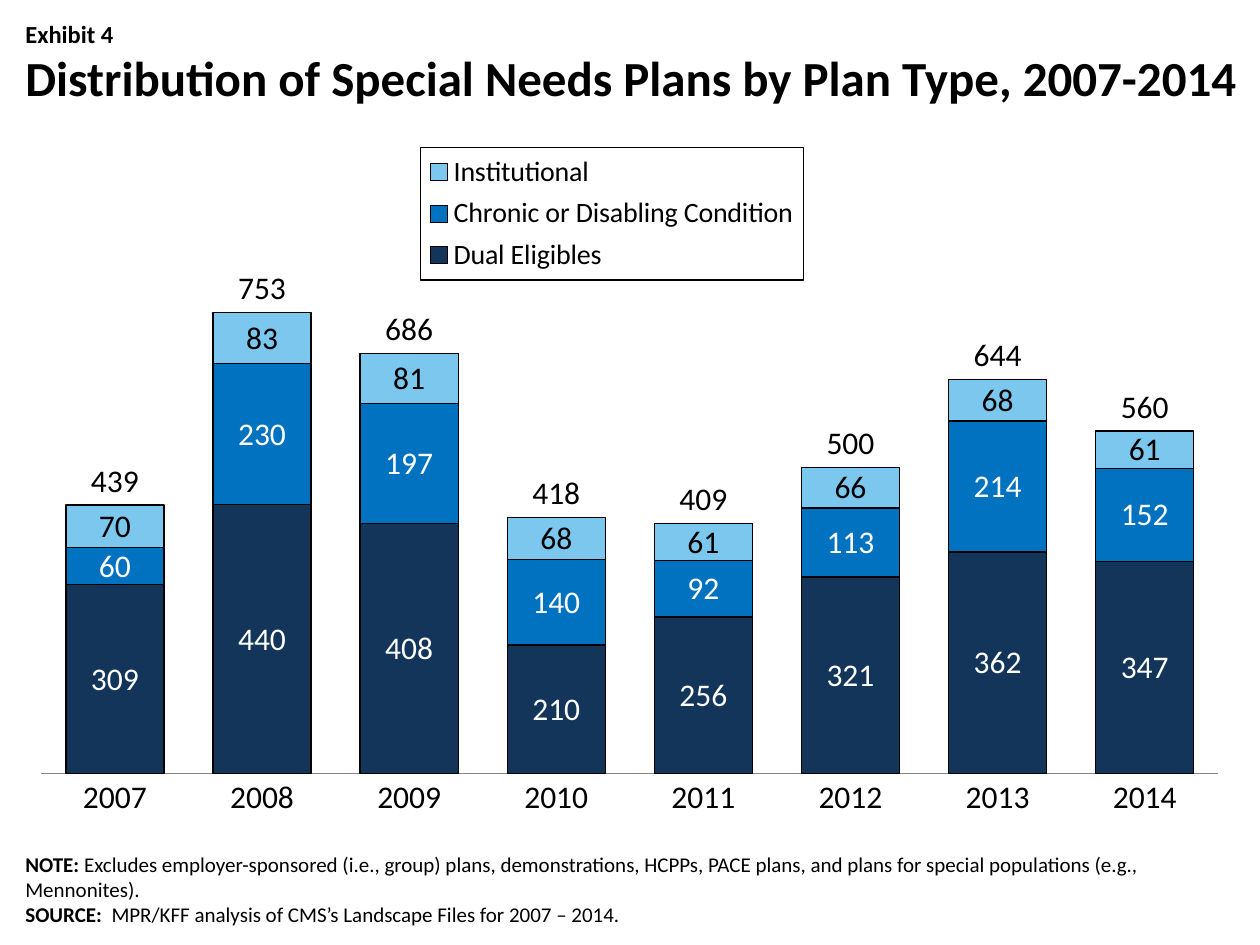
import pptx
import pptx.util
import pptx.chart.data
import pptx.dml.color
import pptx.enum.chart
import pptx.enum.text
import pptx.oxml
import pptx.oxml.ns

RGB = pptx.dml.color.RGBColor
BLACK = RGB(0x00, 0x00, 0x00)
WHITE = RGB(0xFF, 0xFF, 0xFF)
GRAY = RGB(0x86, 0x86, 0x86)
NAVY = RGB(0x13, 0x35, 0x59)
BLUE = RGB(0x00, 0x72, 0xC0)
SKY = RGB(0x7B, 0xC7, 0xED)
FONT = "Calibri"
TOP = pptx.enum.text.MSO_ANCHOR.TOP
BOTTOM = pptx.enum.text.MSO_ANCHOR.BOTTOM

# Content: each text box is (place, size, anchor, line spacing, paragraphs),
# each paragraph a list of (text, bold)
TEXTS = [
    ((13, 13, 1235, 43), 14, TOP, 1.0, [[("Exhibit 4", True)]]),
    ((13, 50, 1247, 76), 28, TOP, 0.85,
     [[("Distribution of Special Needs Plans by Plan Type, 2007-2014", True)]]),
    ((13, 857, 1147, 76), 12, BOTTOM, 1.0, [
        [("NOTE:", True),
         (" Excludes employer-sponsored (i.e., group) plans, demonstrations, HCPPs, "
          "PACE plans, and plans for special populations (e.g., Mennonites).", False)],
        [("SOURCE:  ", True),
         ("MPR/KFF analysis of CMS’s Landscape Files for 2007 – 2014.", False)],
    ]),
]
YEARS = [str(year) for year in range(2007, 2015)]
PLANS = [  # name, values, fill, label colour
    ("Dual Eligibles", [309, 440, 408, 210, 256, 321, 362, 347], NAVY, WHITE),
    ("Chronic or Disabling Condition", [60, 230, 197, 140, 92, 113, 214, 152], BLUE, WHITE),
    ("Institutional", [70, 83, 81, 68, 61, 66, 68, 61], SKY, BLACK),
]
TOTALS = [439, 753, 686, 418, 409, 500, 644, 560]
CHART = (13, 147, 1235, 697)
PLOT = (0.023, 0.196, 0.953, 0.703)
LEGEND = (0.33, 0.0, 0.31, 0.19)


def px(n):
    return pptx.util.Emu(round(n * 914400 / 126))


def style(font, size, color=BLACK, bold=False):
    font.name, font.size, font.bold = FONT, pptx.util.Pt(size), bold
    font.color.rgb = color


def node(tag, inner="", attrs=""):
    spaces = pptx.oxml.ns.nsdecls("c", "a")
    return pptx.oxml.parse_xml(f"<c:{tag} {spaces} {attrs}>{inner}</c:{tag}>")


def kids(parent, tag):
    return parent.findall(pptx.oxml.ns.qn("c:" + tag))


def drop(parent, tag):
    for old in kids(parent, tag):
        parent.remove(old)


def layout(box, inner=False):
    target = '<c:layoutTarget val="inner"/>' if inner else ""
    modes = "".join(f'<c:{k}Mode val="edge"/>' for k in "xy")
    sizes = "".join(f'<c:{k} val="{v}"/>' for k, v in zip("xywh", box))
    return node("layout", f"<c:manualLayout>{target}{modes}{sizes}</c:manualLayout>")


def add_text(slide, place, size, anchor, space, paras):
    frame = slide.shapes.add_textbox(*map(px, place)).text_frame
    frame.word_wrap = True
    frame.vertical_anchor = anchor
    for i, parts in enumerate(paras):
        para = frame.add_paragraph() if i else frame.paragraphs[0]
        para.line_spacing = space
        for text, bold in parts:
            run = para.add_run()
            run.text = text
            style(run.font, size, BLACK, bold)


def add_labels(series, color, place):
    labels = series.data_labels
    labels.show_value = True
    labels.position = place
    style(labels.font, 18, color)


def add_chart(slide):
    kinds = pptx.enum.chart
    data = pptx.chart.data.CategoryChartData()
    data.categories = YEARS
    for name, values, *_ in PLANS:
        data.add_series(name, values)
    data.add_series("Total", TOTALS)
    chart = slide.shapes.add_chart(
        kinds.XL_CHART_TYPE.COLUMN_STACKED, *map(px, CHART), data).chart
    style(chart.font, 18)
    chart.has_title = False

    # Axes
    chart.value_axis.visible = False
    chart.value_axis.has_major_gridlines = False
    chart.value_axis.minimum_scale = 0
    chart.value_axis.maximum_scale = 800
    axis = chart.category_axis
    axis.major_tick_mark = kinds.XL_TICK_MARK.NONE
    axis.format.line.color.rgb = GRAY
    style(axis.tick_labels.font, 18)

    # Stacked columns
    plot = chart.plots[0]
    plot.gap_width, plot.overlap = 50, 100
    plot.vary_by_categories = False
    *bars, total = list(plot.series)
    for series, (_, _, fill, color) in zip(bars, PLANS):
        series.format.fill.solid()
        series.format.fill.fore_color.rgb = fill
        series.format.line.color.rgb = BLACK
        series.format.line.width = pptx.util.Pt(0.75)
        add_labels(series, color, kinds.XL_LABEL_POSITION.CENTER)

    # Totals: a line without stroke that carries the labels above the columns
    total.format.line.fill.background()
    add_labels(total, BLACK, kinds.XL_LABEL_POSITION.ABOVE)
    ser = total._element
    drop(ser, "invertIfNegative")
    kids(ser, "spPr")[0].addnext(node("marker", '<c:symbol val="none"/>'))
    ser.append(node("smooth", attrs='val="0"'))
    bar = kids(chart._chartSpace.chart.plotArea, "barChart")[0]
    ids = "".join(f'<c:axId val="{a.get("val")}"/>' for a in kids(bar, "axId"))
    line = node("lineChart", '<c:grouping val="standard"/><c:varyColors val="0"/>'
                '<c:marker val="1"/>' + ids)
    line.insert(2, ser)
    bar.addnext(line)

    # Plot area and legend
    area = bar.getparent()
    drop(area, "layout")
    area.insert(0, layout(PLOT, True))
    chart.has_legend = True
    legend = chart.legend
    legend.position = kinds.XL_LEGEND_POSITION.RIGHT
    legend.include_in_layout = False
    style(legend.font, 16)
    root = legend._element
    drop(root, "layout")
    place = root.get_or_add_legendPos()
    place.addnext(layout(LEGEND))
    place.addnext(node("legendEntry", '<c:idx val="3"/><c:delete val="1"/>'))
    kids(root, "txPr")[0].addprevious(node(
        "spPr", f'<a:ln w="9525"><a:solidFill><a:srgbClr val="{BLACK}"/></a:solidFill></a:ln>'))


def main():
    deck = pptx.Presentation()
    deck.slide_width, deck.slide_height = px(1260), px(945)
    slide = deck.slides.add_slide(deck.slide_layouts[6])
    add_chart(slide)
    for item in TEXTS:
        add_text(slide, *item)
    deck.save("out.pptx")


if __name__ == "__main__":
    main()
